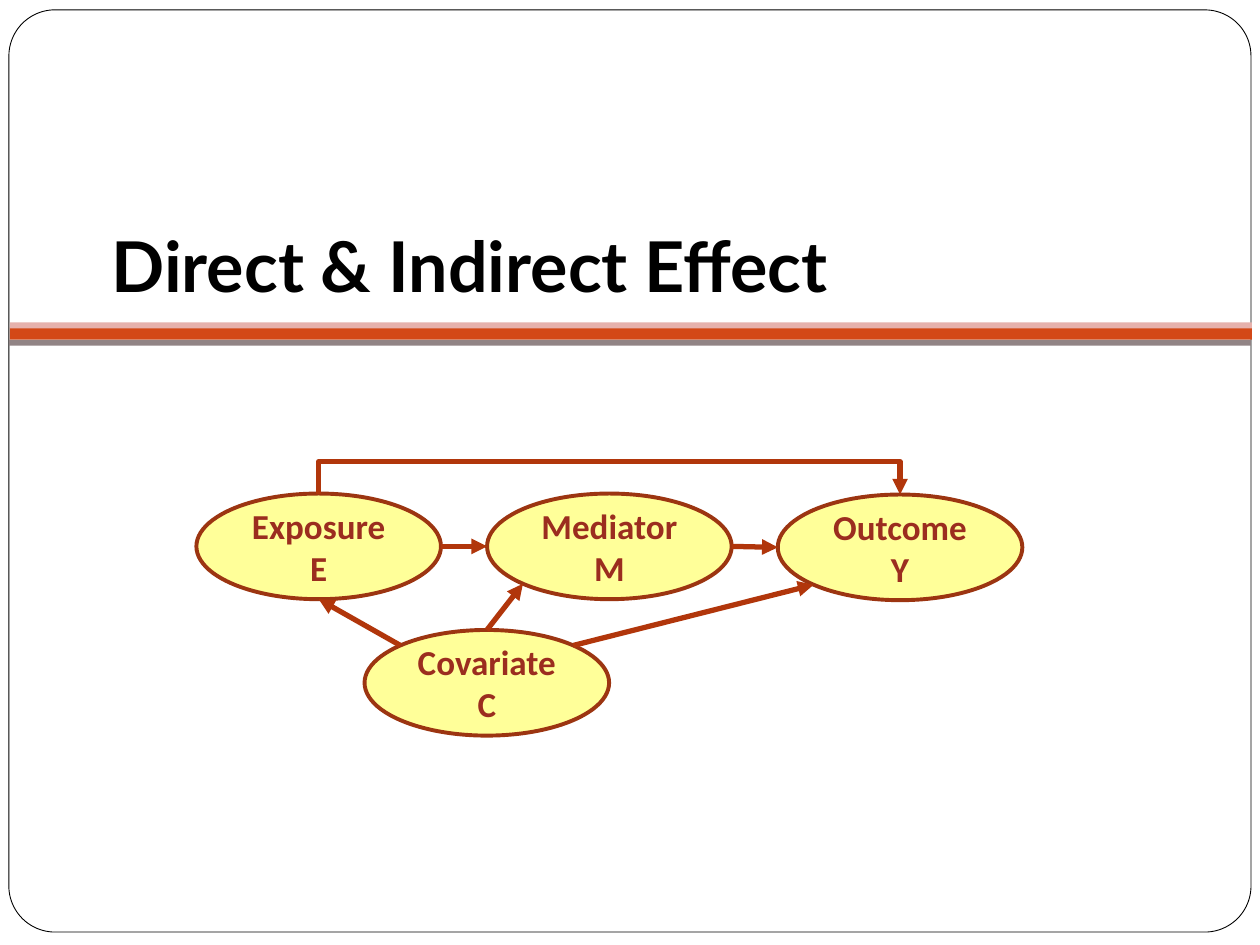
import math

import pptx
import pptx.dml.color
import pptx.enum.shapes
import pptx.enum.text
import pptx.oxml.ns
import pptx.util
from lxml import etree

Cm = pptx.util.Cm
Pt = pptx.util.Pt
RGBColor = pptx.dml.color.RGBColor
SHAPE = pptx.enum.shapes.MSO_SHAPE
CONNECTOR = pptx.enum.shapes.MSO_CONNECTOR
ANCHOR = pptx.enum.text.MSO_ANCHOR
ALIGN = pptx.enum.text.PP_ALIGN
qn = pptx.oxml.ns.qn

BLACK = RGBColor(0x00, 0x00, 0x00)
WHITE = RGBColor(0xFF, 0xFF, 0xFF)
ORANGE = RGBColor(0xD3, 0x48, 0x17)
PINK = RGBColor(0xE6, 0xB1, 0xAC)
GREY = RGBColor(0x91, 0x84, 0x85)
YELLOW = RGBColor(0xFF, 0xFF, 0x99)
OUTLINE = RGBColor(0x9C, 0x35, 0x11)
LABEL = RGBColor(0x9B, 0x2D, 0x1F)
ARROW = RGBColor(0xB1, 0x36, 0x0B)

NODE_W, NODE_H = 4.93, 2.13
ROW_LEFT, ROW_TOP, ROW_STEP = 3.96, 9.95, 5.86
OUTCOME_DROP = 0.02
BEND_RISE = 0.64

# Connection sites of an ellipse, counted counter-clockwise from the top
TOP, TOP_LEFT, LEFT, BOTTOM_LEFT, BOTTOM, BOTTOM_RIGHT, RIGHT, TOP_RIGHT = range(8)

TITLE_FONT = {"name": "Lato", "size": Pt(40), "bold": True}
NODE_FONT = {"name": "Calibri", "size": Pt(20), "bold": True}


def set_all(target, values):
    for name, value in values.items():
        setattr(target, name, value)


def write(frame, text, font, color):
    para = frame.paragraphs[0]
    span = para.add_run()
    span.text = text
    set_all(span.font, font)
    span.font.color.rgb = color
    return para


def add_block(page, kind, place, fill, line=None, weight=0):
    """Add a filled preset shape; place is left, top, width, height in cm."""
    block = page.shapes.add_shape(kind, *map(Cm, place))
    block.shadow.inherit = False
    block.fill.solid()
    block.fill.fore_color.rgb = fill
    if line is None:
        block.line.fill.background()
    else:
        block.line.color.rgb = line
        block.line.width = Pt(weight)
    return block


def add_title(page, text):
    box = page.shapes.add_textbox(Cm(2), Cm(2.64), Cm(21.59), Cm(3.78))
    set_all(box.text_frame, {
        "word_wrap": True,
        "vertical_anchor": ANCHOR.BOTTOM,
        "margin_bottom": Cm(0.25),
    })
    write(box.text_frame, text, TITLE_FONT, BLACK)


def add_node(page, text, left, top):
    place = (left, top, NODE_W, NODE_H)
    node = add_block(page, SHAPE.OVAL, place, YELLOW, OUTLINE, 2.25)
    set_all(node.text_frame, {"word_wrap": True, "vertical_anchor": ANCHOR.MIDDLE})
    para = write(node.text_frame, text, NODE_FONT, LABEL)
    para.alignment = ALIGN.CENTER
    return node


def site_point(node, site):
    angle = site * math.pi / 4
    x = node.left + node.width / 2 * (1 - math.sin(angle))
    y = node.top + node.height / 2 * (1 - math.cos(angle))
    return round(x), round(y)


def style_arrow(arrow):
    arrow.line.color.rgb = ARROW
    arrow.line.width = Pt(3)
    etree.SubElement(arrow.line._get_or_add_ln(), qn("a:tailEnd"), type="triangle")
    etree.SubElement(arrow._element.spPr, qn("a:effectLst"))


def add_arrow(page, start, start_site, end, end_site):
    """Add a straight arrow glued to a site of each node."""
    arrow = page.shapes.add_connector(
        CONNECTOR.STRAIGHT, *site_point(start, start_site), *site_point(end, end_site))
    style_arrow(arrow)
    glue = arrow._element.nvCxnSpPr.cNvCxnSpPr
    for tag, node, site in (("a:stCxn", start, start_site), ("a:endCxn", end, end_site)):
        etree.SubElement(glue, qn(tag), id=str(node.shape_id), idx=str(site))


def add_bent_arrow(page, start, end):
    """Add an arrow that rises above both nodes and joins their tops."""
    x1, y1 = site_point(start, TOP)
    x2, y2 = site_point(end, TOP)
    span, drop = x2 - x1, y2 - y1
    # The elbow is drawn upright, then turned by 270 degrees about its centre
    left, top = (x1 + x2 - drop) // 2, (y1 + y2 - span) // 2
    arrow = page.shapes.add_connector(
        CONNECTOR.ELBOW, left + drop, top, left, top + span)
    arrow._element.spPr.find(qn("a:xfrm")).set("rot", str(270 * 60000))
    bend = round(-Cm(BEND_RISE) / drop * 100000)
    guides = arrow._element.spPr.find(qn("a:prstGeom")).get_or_add_avLst()
    etree.SubElement(guides, qn("a:gd"), name="adj1", fmla=f"val {bend}")
    style_arrow(arrow)


def add_background(page):
    frame = add_block(page, SHAPE.ROUNDED_RECTANGLE, (0.18, 0.2, 25.04, 18.59),
                      WHITE, BLACK, 0.5)
    frame.adjustments[0] = 0.05
    for left, top, height, color in ((0.2, 6.6, 0.25, ORANGE),
                                     (0.2, 6.5, 0.12, PINK),
                                     (0.18, 6.85, 0.12, GREY)):
        add_block(page, SHAPE.RECTANGLE, (left, top, 25.04, height), color)


def main():
    deck = pptx.Presentation()
    deck.slide_width, deck.slide_height = Cm(25.4), Cm(19.05)
    page = deck.slides.add_slide(deck.slide_layouts[6])

    add_background(page)
    add_title(page, "Direct & Indirect Effect")

    exposure = add_node(page, "Exposure E", ROW_LEFT, ROW_TOP)
    mediator = add_node(page, "Mediator M", ROW_LEFT + ROW_STEP, ROW_TOP)
    outcome = add_node(page, "Outcome Y", ROW_LEFT + 2 * ROW_STEP, ROW_TOP + OUTCOME_DROP)
    covariate = add_node(page, "Covariate C", 7.35, 12.7)

    for link in ((exposure, RIGHT, mediator, LEFT),
                 (mediator, RIGHT, outcome, LEFT),
                 (covariate, TOP_LEFT, exposure, BOTTOM),
                 (covariate, TOP, mediator, BOTTOM_LEFT),
                 (covariate, TOP_RIGHT, outcome, BOTTOM_LEFT)):
        add_arrow(page, *link)
    add_bent_arrow(page, exposure, outcome)

    deck.save("out.pptx")


if __name__ == "__main__":
    main()
